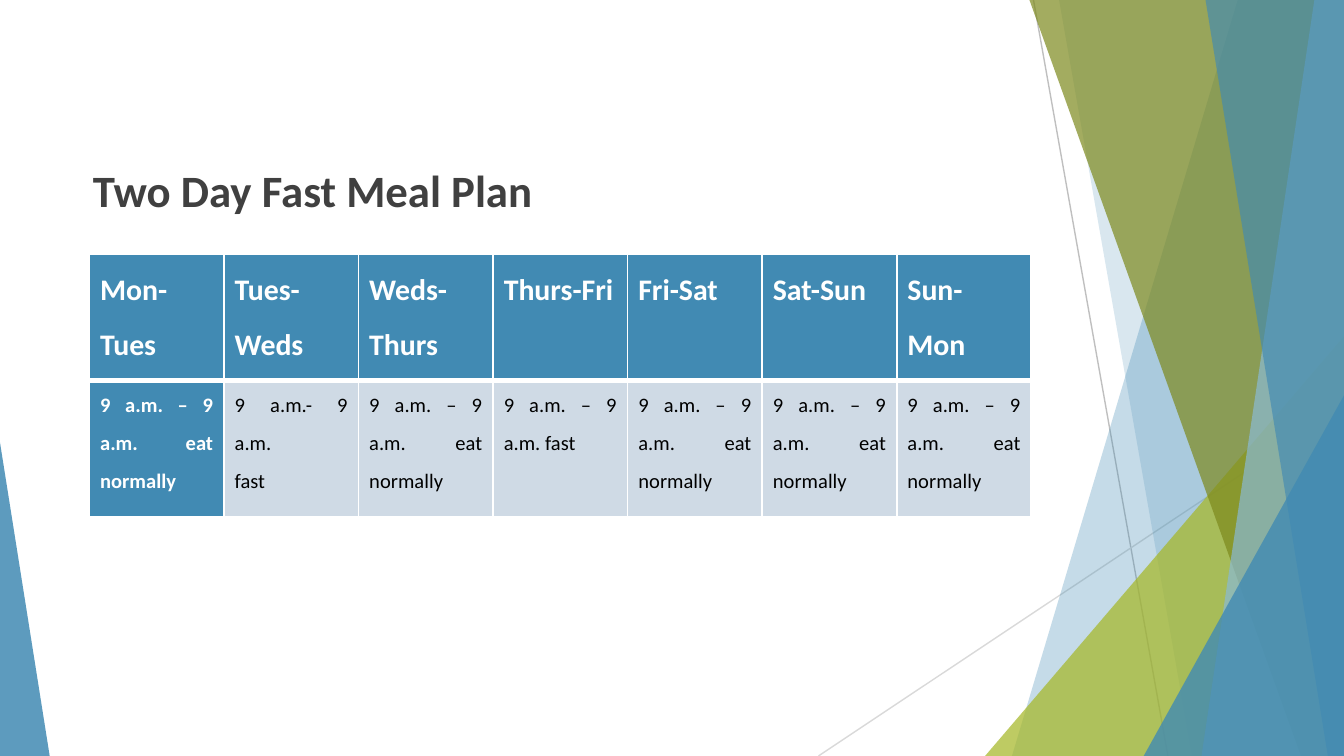
from lxml import etree
from pptx import Presentation
from pptx import util as u
from pptx.dml.color import RGBColor
from pptx.enum import shapes, text
from pptx.oxml.ns import qn

WIDTH = u.Inches(10)
HEIGHT = WIDTH * 9 // 16
FONT = "Calibri"
WHITE = RGBColor(0xFF, 0xFF, 0xFF)
BLACK = RGBColor(0x00, 0x00, 0x00)
CHARCOAL = RGBColor(0x40, 0x40, 0x40)
GREY = RGBColor(0xBF, 0xBF, 0xBF)
PALE_GREY = RGBColor(0xD9, 0xD9, 0xD9)
BLUE = RGBColor(0x41, 0x8A, 0xB3)
LIGHT_BLUE = RGBColor(0x8A, 0xBA, 0xD4)
PALE_BLUE = RGBColor(0xCF, 0xDA, 0xE5)
LIME = RGBColor(0xA6, 0xB7, 0x27)
OLIVE = RGBColor(0x7D, 0x89, 0x1D)

EAT = "9 a.m. – 9 a.m. eat normally"
PLAN = [
    ("Mon-Tues", EAT),
    ("Tues-Weds", "9 a.m.- 9 a.m. \nfast"),
    ("Weds-Thurs", EAT),
    ("Thurs-Fri", "9 a.m. – 9 a.m. fast"),
    ("Fri-Sat", EAT),
    ("Sat-Sun", EAT),
    ("Sun-Mon", EAT),
]


def across(percent):
    return round(WIDTH * percent / 100)


def down(percent):
    return round(HEIGHT * percent / 100)


def paint(shape, color, opacity):
    shape.shadow.inherit = False
    shape.line.fill.background()
    shape.fill.solid()
    shape.fill.fore_color.rgb = color
    tint = shape.fill._xPr.find(qn("a:solidFill"))[0]
    etree.SubElement(tint, qn("a:alpha"), val=str(opacity * 1000))


def add_ray(page, start, end, color):
    ray = page.shapes.add_connector(
        shapes.MSO_CONNECTOR.STRAIGHT,
        across(start[0]), down(start[1]), across(end[0]), down(end[1]))
    ray.line.color.rgb = color
    ray.line.width = u.Pt(0.75)
    etree.SubElement(ray._element.spPr, qn("a:effectLst"))


def add_band(page, top_left, bottom_left, color, opacity):
    builder = page.shapes.build_freeform(across(top_left), 0)
    builder.add_line_segments([
        (WIDTH, 0), (WIDTH, HEIGHT), (across(bottom_left), HEIGHT)])
    paint(builder.convert_to_shape(), color, opacity)


def add_corner(page, left, top, width, peak, color, opacity):
    corner = page.shapes.add_shape(
        shapes.MSO_SHAPE.ISOSCELES_TRIANGLE,
        across(left), down(top), across(width), down(100 - top))
    corner.adjustments[0] = peak
    paint(corner, color, opacity)


def add_backdrop(page):
    add_ray(page, (76.9, 0), (86.9, 100), GREY)
    add_ray(page, (100, 53.7), (60.9, 100), PALE_GREY)
    add_band(page, 92.1, 75.3, BLUE, 30)
    add_band(page, 78.8, 88.7, BLUE, 20)
    add_corner(page, 73.3, 44.5, 26.7, 1, LIME, 72)
    add_band(page, 76.6, 96.8, OLIVE, 70)
    add_band(page, 97.8, 89.4, LIGHT_BLUE, 70)
    add_band(page, 89.7, 98.8, BLUE, 65)
    add_corner(page, 85.1, 52.3, 14.9, 1, BLUE, 80)
    add_corner(page, 0, 58.5, 3.7, 0, BLUE, 85)


def style_font(para, size, color, bold):
    para.font.name = FONT
    para.font.size = u.Pt(size)
    para.font.color.rgb = color
    para.font.bold = bold


def add_title(page, words):
    box = page.shapes.add_textbox(across(5.93), down(20.65), across(45.7), down(11.2))
    box.text_frame.word_wrap = True
    para = box.text_frame.paragraphs[0]
    para.text = words
    para.space_before = u.Pt(7.5)
    style_font(para, 24, CHARCOAL, True)


def add_borders(cell, widths):
    properties = cell._tc.get_or_add_tcPr()
    for position, (side, points) in enumerate(widths.items()):
        border = etree.Element(qn(f"a:ln{side}"), w=str(u.Pt(points)))
        fill = etree.SubElement(border, qn("a:solidFill"))
        etree.SubElement(fill, qn("a:srgbClr"), val=str(WHITE))
        properties.insert(position, border)


def fill_cell(cell, words, size, color, bold, background, widths):
    cell.margin_left = cell.margin_right = u.Inches(0.08)
    cell.margin_top = cell.margin_bottom = 0
    cell.fill.solid()
    cell.fill.fore_color.rgb = background
    cell.text = words
    for para in cell.text_frame.paragraphs:
        para.alignment = text.PP_ALIGN.JUSTIFY
        para.line_spacing = 1.5
        style_font(para, size, color, bold)
    add_borders(cell, widths)


def add_plan(page):
    heights = [down(16.7), down(18)]
    table = page.shapes.add_table(
        len(heights), len(PLAN),
        across(6.65), down(33.6), across(70.1), sum(heights)).table
    for row, height in zip(table.rows, heights):
        row.height = height
    for column, (days, meal) in enumerate(PLAN):
        fill_cell(table.cell(0, column), days, 16, WHITE, True, BLUE,
                  {"L": 1, "R": 1, "T": 1, "B": 3})
        first = column == 0
        fill_cell(table.cell(1, column), meal, 11,
                  WHITE if first else BLACK, first,
                  BLUE if first else PALE_BLUE,
                  {"L": 1, "R": 1, "T": 3, "B": 1})


def main():
    deck = Presentation()
    deck.slide_width, deck.slide_height = WIDTH, HEIGHT
    page = deck.slides.add_slide(deck.slide_layouts[6])
    add_backdrop(page)
    add_title(page, "Two Day Fast Meal Plan")
    add_plan(page)
    deck.save("out.pptx")


if __name__ == "__main__":
    main()
